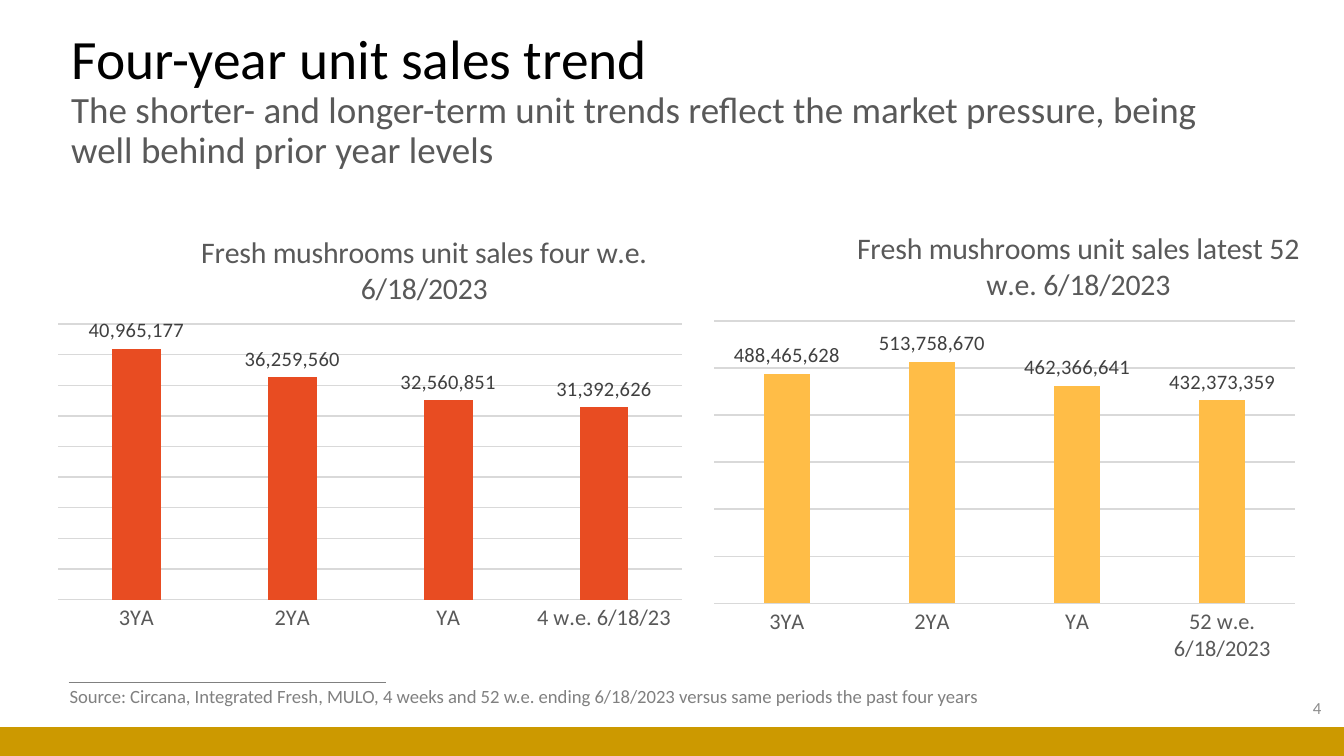
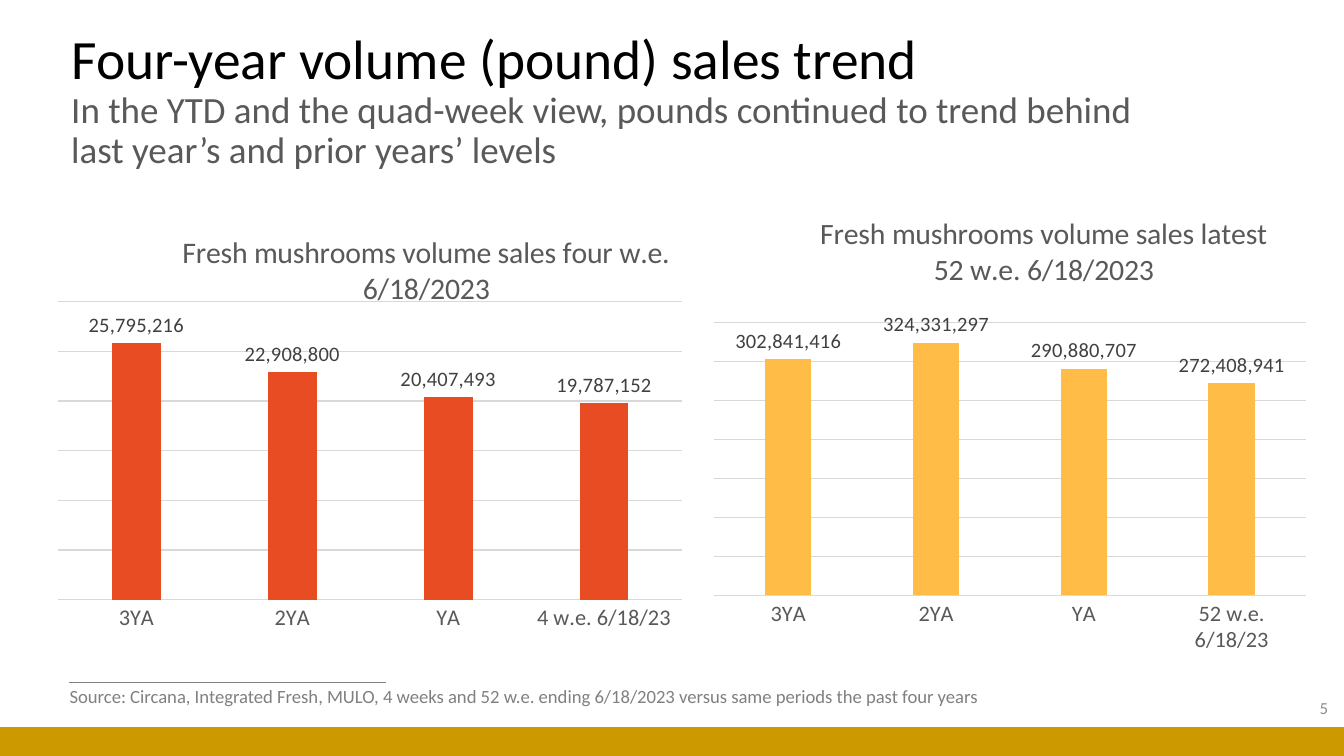
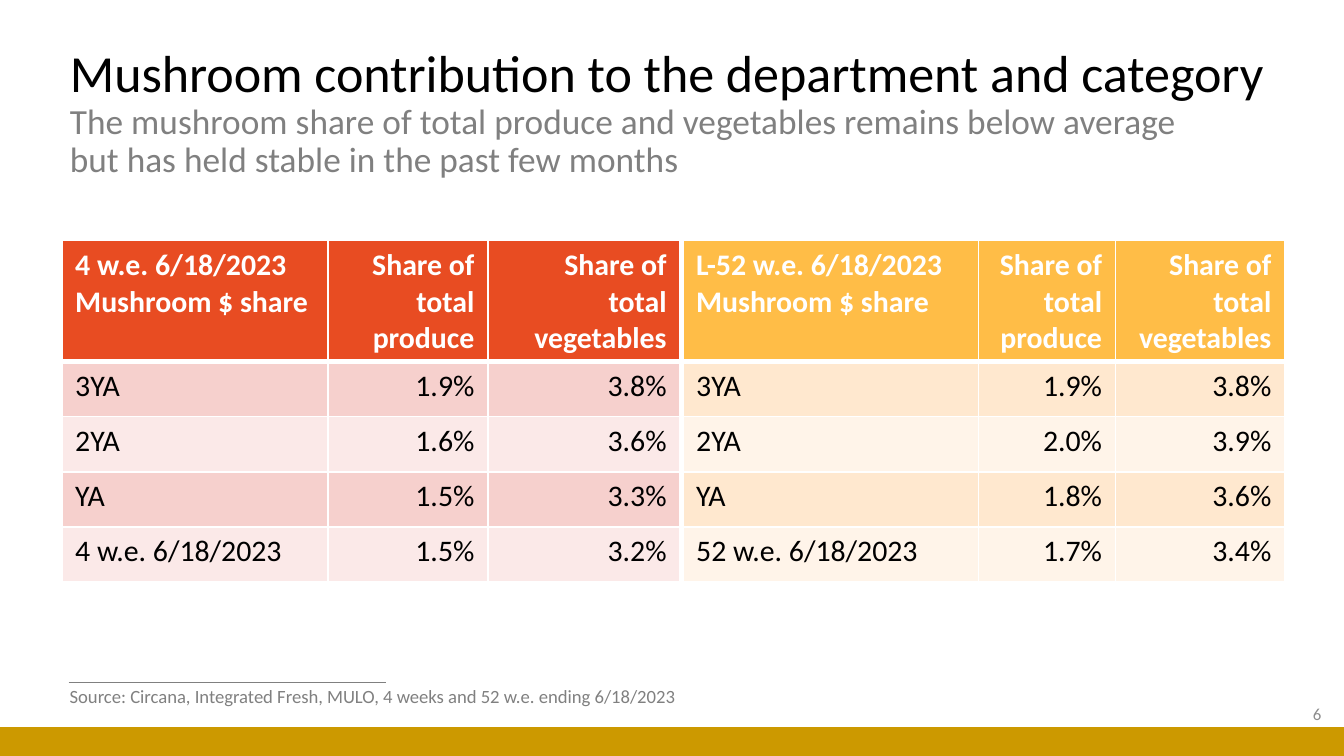
import copy
from dataclasses import dataclass

import pptx
import pptx.chart.data
import pptx.dml.color
import pptx.enum.chart
import pptx.enum.shapes
import pptx.enum.text
import pptx.oxml
import pptx.oxml.ns
import pptx.util

Inches, Pt = pptx.util.Inches, pptx.util.Pt
RGB = pptx.dml.color.RGBColor.from_string
ALIGN = pptx.enum.text.PP_ALIGN
A_NS = pptx.oxml.ns.nsdecls("a")
C_NS = pptx.oxml.ns.nsdecls("c")


@dataclass(frozen=True)
class Theme:
    """Colours, font and type sizes shared by the slides."""
    font: str = "Calibri"
    black: str = "000000"
    white: str = "FFFFFF"
    gold: str = "CC9900"
    dark: str = "595959"
    label: str = "404040"
    gray: str = "808080"
    number: str = "8C8C8C"
    grid: str = "D9D9D9"
    red: str = "E84C22"
    red_bands: tuple = ("F6D0CD", "FBE9E8")
    amber: str = "FFBD47"
    amber_bands: tuple = ("FFE8CF", "FFF4E9")
    title_pt: float = 29.7
    subtitle_pt: float = 19.8
    long_title_pt: float = 27.9
    long_subtitle_pt: float = 18.9
    heading_pt: float = 16
    axis_pt: float = 12
    label_pt: float = 11
    small_pt: float = 10
    number_pt: float = 9


class Deck:
    """Holds the theme and the current slide, and adds elements to it."""

    def __init__(self, theme):
        self.t = theme
        self.prs = pptx.Presentation()
        self.prs.slide_width = Inches(10)
        self.prs.slide_height = Inches(10 * 9 / 16)
        self.s = None

    def style(self, font, size, color, bold=False):
        """Set the family, size, colour and weight of a font."""
        font.name, font.size, font.bold = self.t.font, Pt(size), bold
        font.color.rgb = RGB(color)

    def run(self, p, text, size, color, bold=False):
        """Add one styled run."""
        r = p.add_run()
        r.text = text
        self.style(r.font, size, color, bold)
        return r

    def lines(self, p, items):
        """Add styled runs parted by line breaks."""
        for i, item in enumerate(items):
            r = self.run(p, *item)
            if i < len(items) - 1:
                p.add_line_break()
                p._p[-1].append(copy.deepcopy(r._r.rPr))

    def slide(self, number, source, source_width, number_left=7.68, number_top=5.12):
        """Start a slide with its rule, band, source line and number."""
        self.s = self.prs.slides.add_slide(self.prs.slide_layouts[5])
        shapes = self.s.shapes
        rule = shapes.add_connector(pptx.enum.shapes.MSO_CONNECTOR.STRAIGHT,
                                    Inches(0.51), Inches(5.08), Inches(2.87), Inches(5.08))
        rule.line.color.rgb = RGB(self.t.gray)
        rule.line.width = Pt(0.5)
        rule._element.spPr.append(pptx.oxml.parse_xml(f"<a:effectLst {A_NS}/>"))
        top = Inches(5.41)
        band = shapes.add_shape(pptx.enum.shapes.MSO_SHAPE.RECTANGLE, 0, top,
                                self.prs.slide_width, self.prs.slide_height - top)
        band.shadow.inherit = False
        band.fill.solid()
        band.fill.fore_color.rgb = RGB(self.t.gold)
        band.line.fill.background()
        self.text((number_left, number_top, 2.25, 0.3), str(number), self.t.number_pt,
                  self.t.number, ALIGN.RIGHT, pptx.enum.text.MSO_ANCHOR.MIDDLE)
        tf = self.text((0.42, 5.05, source_width, 0.27), source, self.t.small_pt, self.t.gray)
        tf.word_wrap = False
        tf.auto_size = pptx.enum.text.MSO_AUTO_SIZE.SHAPE_TO_FIT_TEXT

    def text(self, box, text, size, color, align=ALIGN.LEFT,
             anchor=pptx.enum.text.MSO_ANCHOR.TOP):
        """Add a one-paragraph text box and return its frame."""
        tf = self.s.shapes.add_textbox(*map(Inches, box)).text_frame
        tf.word_wrap = True
        tf.vertical_anchor = anchor
        p = tf.paragraphs[0]
        p.alignment = align
        self.run(p, text, size, color)
        return tf

    def title(self, box, heading, subtitle, sizes, color):
        """Fill the title placeholder with a heading and subtitle lines."""
        sp = self.s.shapes.title
        sp.left, sp.top, sp.width, sp.height = map(Inches, box)
        tf = sp.text_frame
        tf.word_wrap = True
        tf.auto_size = pptx.enum.text.MSO_AUTO_SIZE.NONE
        tf.vertical_anchor = pptx.enum.text.MSO_ANCHOR.MIDDLE
        p = tf.paragraphs[0]
        p.alignment = ALIGN.LEFT
        p.line_spacing = 0.9
        self.lines(p, [(heading, sizes[0], self.t.black)]
                   + [(line, sizes[1], color) for line in subtitle])

    def layout(self, parent, index, **place):
        """Give a chart part a manual layout in fractions of the chart."""
        for old in parent.findall(pptx.oxml.ns.qn("c:layout")):
            parent.remove(old)
        target = '<c:layoutTarget val="inner"/>' if "w" in place else ""
        modes = "".join(f'<c:{k}Mode val="edge"/>' for k in "xy")
        values = "".join(f'<c:{k} val="{v}"/>' for k, v in place.items())
        parent.insert(index, pptx.oxml.parse_xml(
            f"<c:layout {C_NS}><c:manualLayout>{target}{modes}{values}"
            "</c:manualLayout></c:layout>"))

    def columns(self, box, heading, last, values, color, plot, heading_at):
        """Add a column chart of four periods."""
        data = pptx.chart.data.CategoryChartData(number_format="#,##0")
        data.categories = ["3YA", "2YA", "YA", last]
        data.add_series("Series 1", values)
        chart = self.s.shapes.add_chart(pptx.enum.chart.XL_CHART_TYPE.COLUMN_CLUSTERED,
                                        *map(Inches, box), data).chart
        self.style(chart.font, self.t.small_pt, self.t.black)
        chart.has_legend = False
        chart.has_title = True
        p = chart.chart_title.text_frame.paragraphs[0]
        self.run(p, heading, self.t.heading_pt, self.t.dark)
        self.layout(chart.chart_title._element, 1, **dict(zip("xy", heading_at)))
        self.layout(chart._chartSpace.chart.plotArea, 0, **dict(zip("xywh", plot)))

        none = pptx.enum.chart.XL_TICK_MARK.NONE
        cat, val = chart.category_axis, chart.value_axis
        cat.major_tick_mark = cat.minor_tick_mark = none
        self.style(cat.tick_labels.font, self.t.axis_pt, self.t.dark)
        val.minimum_scale = 0
        val.has_major_gridlines = True
        val.tick_labels.number_format = "#,##0"
        val.tick_labels.number_format_is_linked = False
        val.visible = False
        for line in (cat.format.line, val.major_gridlines.format.line):
            line.color.rgb = RGB(self.t.grid)
            line.width = Pt(0.75)

        bars = chart.plots[0]
        bars.gap_width, bars.overlap, bars.vary_by_categories = 219, -27, False
        series = bars.series[0]
        series.format.fill.solid()
        series.format.fill.fore_color.rgb = RGB(color)
        labels = series.data_labels
        labels.show_value = True
        labels.position = pptx.enum.chart.XL_LABEL_POSITION.OUTSIDE_END
        labels.number_format, labels.number_format_is_linked = "#,##0", False
        self.style(labels.font, self.t.label_pt, self.t.label)

    def borders(self, cell, **widths):
        """Draw the four white borders of a cell."""
        for side in "LRTB":
            cell._tc.get_or_add_tcPr().append(pptx.oxml.parse_xml(
                f'<a:ln{side} {A_NS} w="{Pt(widths.get(side, 1))}"><a:solidFill>'
                f'<a:srgbClr val="{self.t.white}"/></a:solidFill></a:ln{side}>'))

    def table(self, left, widths, period, rows, color, bands):
        """Add a share table with a coloured header and banded rows."""
        header = ([period, "Mushroom $ share"],
                  ["Share of total produce"], ["Share of total vegetables"])
        grid = [header] + [[[text] for text in row] for row in rows]
        row_height = 0.41
        frame = self.s.shapes.add_table(len(grid), len(widths), Inches(left), Inches(1.79),
                                        Inches(sum(widths)), Inches(row_height * len(grid)))
        table = frame.table
        for column, width in zip(table.columns, widths):
            column.width = Inches(width)
        for i, row in enumerate(grid):
            for j, texts in enumerate(row):
                cell = table.cell(i, j)
                self.borders(cell, T=3 if i == 1 else 1, B=3 if i == 0 else 1)
                cell.fill.solid()
                cell.fill.fore_color.rgb = RGB(bands[(i - 1) % 2] if i else color)
                p = cell.text_frame.paragraphs[0]
                p.alignment = ALIGN.RIGHT if j else ALIGN.LEFT
                ink = self.t.black if i else self.t.white
                self.lines(p, [(text, self.t.heading_pt, ink, i == 0) for text in texts])
        frame.height = Inches(2.52)


def main():
    """Build the three slides and save them."""
    t = Theme()
    d = Deck(t)
    source = "Source: Circana, Integrated Fresh, MULO, 4 weeks and 52 w.e. ending 6/18/2023"
    trend_source = source + " versus same periods the past four years"
    trend_sizes = (t.title_pt, t.subtitle_pt)
    left_box = (0.43, 1.55, 4.65, 3.31)
    four, year = " four w.e. 6/18/2023", " latest 52 w.e. 6/18/2023"

    d.slide(4, trend_source, 7.1)
    d.title((0.43, 0.36, 9.06, 0.79), "Four-year unit sales trend",
            ["The shorter- and longer-term unit trends reflect the market pressure, "
             "being well behind prior year levels"], trend_sizes, t.dark)
    units = "Fresh mushrooms unit sales"
    d.columns(left_box, units + four, "4 w.e. 6/18/23",
              (40965177, 36259560, 32560851, 31392626), t.red,
              (0, 0.26, 1, 0.62), (0.22, 0.04))
    d.columns((5.31, 1.55, 4.65, 3.5), units + year, "52 w.e. 6/18/2023",
              (488465628, 513758670, 462366641, 432373359), t.amber,
              (0, 0.24, 0.93, 0.6), (0.22, 0.03))

    d.slide(5, trend_source, 7.1, number_left=7.73)
    d.title((0.43, 0.36, 8.35, 0.79), "Four-year volume (pound) sales trend",
            ["In the YTD and the quad-week view, pounds continued to trend behind "
             "last year’s and prior years’ levels"], trend_sizes, t.dark)
    volume = "Fresh mushrooms volume sales"
    d.columns(left_box, volume + four, "4 w.e. 6/18/23",
              (25795216, 22908800, 20407493, 19787152), t.red,
              (0, 0.21, 1, 0.67), (0.19, 0.04))
    d.columns((5.31, 1.55, 4.41, 3.31), volume + year, "52 w.e. 6/18/23",
              (302841416, 324331297, 290880707, 272408941), t.amber,
              (0, 0.26, 1, 0.62), (0.17, 0))

    d.slide(6, source, 4.81, number_top=5.16)
    d.title((0.42, 0.58, 9.58, 0.54), "Mushroom contribution to the department and category",
            ["The mushroom share of total produce and vegetables remains below average",
             "but has held stable in the past few months"],
            (t.long_title_pt, t.long_subtitle_pt), t.gray)
    d.table(0.46, (1.98, 1.19, 1.43), "4 w.e. 6/18/2023",
            (("3YA", "1.9%", "3.8%"), ("2YA", "1.6%", "3.6%"),
             ("YA", "1.5%", "3.3%"), ("4 w.e. 6/18/2023", "1.5%", "3.2%")),
            t.red, t.red_bands)
    d.table(5.08, (2.2, 1.02, 1.26), "L-52 w.e. 6/18/2023",
            (("3YA", "1.9%", "3.8%"), ("2YA", "2.0%", "3.9%"),
             ("YA", "1.8%", "3.6%"), ("52 w.e. 6/18/2023", "1.7%", "3.4%")),
            t.amber, t.amber_bands)

    d.prs.save("out.pptx")


if __name__ == "__main__":
    main()
